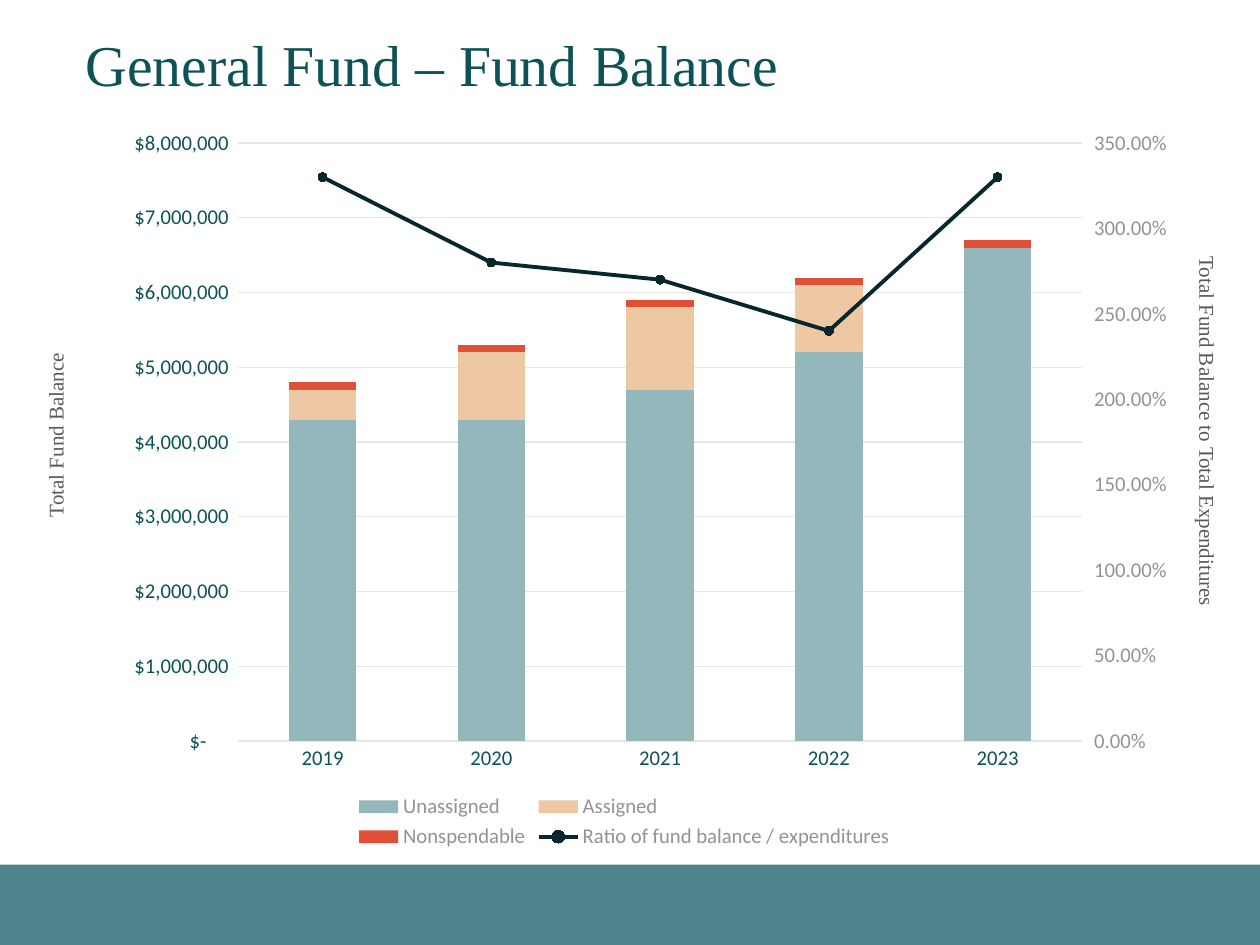
"""Build a slide that charts the general fund balance by year."""
from pptx import Presentation
from pptx.chart.data import CategoryChartData
from pptx.dml.color import RGBColor
from pptx.enum.chart import XL_CHART_TYPE, XL_LEGEND_POSITION, XL_MARKER_STYLE, XL_TICK_MARK
from pptx.enum.shapes import MSO_SHAPE
from pptx.enum.text import MSO_ANCHOR, MSO_AUTO_SIZE, PP_ALIGN
from pptx.oxml import parse_xml
from pptx.oxml.ns import nsdecls, qn
from pptx.util import Inches, Pt

STACKED = XL_CHART_TYPE.COLUMN_STACKED
BOTTOM = XL_LEGEND_POSITION.BOTTOM
CIRCLE = XL_MARKER_STYLE.CIRCLE
NO_TICK = XL_TICK_MARK.NONE
RECT = MSO_SHAPE.RECTANGLE
MIDDLE = MSO_ANCHOR.MIDDLE
FIXED, GROW = MSO_AUTO_SIZE.NONE, MSO_AUTO_SIZE.SHAPE_TO_FIT_TEXT
LEFT = PP_ALIGN.LEFT

TEAL = RGBColor(0x0D, 0x52, 0x57)
BAND = RGBColor(0x4F, 0x86, 0x8E)
SLATE = RGBColor(0x58, 0x59, 0x5B)
GRAY = RGBColor(0x92, 0x93, 0x95)
PALE = RGBColor(0xE6, 0xE6, 0xE7)
MIST = RGBColor(0x93, 0xB7, 0xBB)
SAND = RGBColor(0xED, 0xC8, 0xA3)
RED = RGBColor(0xE0, 0x4F, 0x38)
INK = RGBColor(0x07, 0x27, 0x2C)
SERIF, SANS = "Times New Roman", "Calibri"

WIDE, HIGH = Inches(10), Inches(7.5)
MONEY = '_("$"* #,##0_);_("$"* \\(#,##0\\);_("$"* "-"??_);_(@_)'
YEARS = ["2019", "2020", "2021", "2022", "2023"]
FUNDS = [
    ("Unassigned", [4300000, 4300000, 4700000, 5200000, 6600000], MIST),
    ("Assigned", [400000, 900000, 1100000, 900000, 0], SAND),
    ("Nonspendable", [100000] * 5, RED),
]
RATIO = ("Ratio of fund balance / expenditures", [3.3, 2.8, 2.7, 2.4, 3.3])


def set_font(font, face, size, color):
    font.name, font.size, font.color.rgb = face, Pt(size), color


def frame(x, y, w, h):
    return [int(WIDE * x), int(HIGH * y), int(WIDE * w), int(HIGH * h)]


deck = Presentation()
deck.slide_width, deck.slide_height = WIDE, HIGH
slide = deck.slides.add_slide(deck.slide_layouts[5])

band = slide.shapes.add_shape(RECT, *frame(0, 0.915, 1, 0.085))
band.shadow.inherit = False
band.fill.solid()
band.fill.fore_color.rgb = BAND
band.line.fill.background()

title = slide.shapes.title
title.left, title.top, title.width, title.height = frame(0.058, -0.019, 0.884, 0.181)
title.text_frame.text = "General Fund – Fund Balance"
title.text_frame.auto_size = FIXED
title.text_frame.vertical_anchor = MIDDLE
head = title.text_frame.paragraphs[0]
head.alignment, head.line_spacing = LEFT, 0.9
set_font(head.font, SERIF, 33, TEAL)

data = CategoryChartData()
data.categories = YEARS
for name, values, color in FUNDS:
    data.add_series(name, values, MONEY)
data.add_series(*RATIO, "0.00%")
chart = slide.shapes.add_chart(STACKED, *frame(0.078, 0.136, 0.848, 0.768), data).chart
set_font(chart.font, SANS, 10, SLATE)
chart.has_title = False
chart.has_legend = True
chart.legend.position = BOTTOM
chart.legend.include_in_layout = False
set_font(chart.legend.font, SANS, 12, GRAY)

bars = chart.plots[0]
bars.gap_width, bars.overlap, bars.vary_by_categories = 150, 100, False
for bar, (name, values, color) in zip(bars.series, FUNDS):
    bar.format.fill.solid()
    bar.format.fill.fore_color.rgb = color

years, money = chart.category_axis, chart.value_axis
for axis in (years, money):
    axis.major_tick_mark = axis.minor_tick_mark = NO_TICK
    set_font(axis.tick_labels.font, SANS, 12, TEAL)
money.minimum_scale, money.maximum_scale, money.major_unit = 0, 8000000, 1000000
money.tick_labels.number_format = MONEY
money.tick_labels.number_format_is_linked = False
money.format.line.fill.background()
for line in (years.format.line, money.major_gridlines.format.line):
    line.color.rgb, line.width = PALE, Pt(0.75)

area = chart._chartSpace.chart.plotArea
for old in area.findall(qn("c:layout")):
    area.remove(old)
spots = zip("xywh", (0.133, 0.02, 0.802, 0.824))
sides = "".join(f'<c:{key} val="{val}"/>' for key, val in spots)
area.insert(0, parse_xml(
    f'<c:layout {nsdecls("c")}><c:manualLayout><c:layoutTarget val="inner"/>'
    f'<c:xMode val="edge"/><c:yMode val="edge"/>{sides}</c:manualLayout></c:layout>'))

group = parse_xml(
    f'<c:lineChart {nsdecls("c")}><c:grouping val="standard"/><c:varyColors val="0"/>'
    '<c:marker val="1"/><c:axId val="5001"/><c:axId val="5002"/></c:lineChart>')
trend = area.findall(".//" + qn("c:ser"))[-1]
for flag in trend.findall(qn("c:invertIfNegative")):
    trend.remove(flag)
group.insert(2, trend)
area.find(qn("c:barChart")).addnext(group)

right = parse_xml(
    f'<c:valAx {nsdecls("c", "a")}><c:axId val="5002"/><c:scaling>'
    '<c:orientation val="minMax"/><c:max val="3.5"/><c:min val="0"/></c:scaling>'
    '<c:delete val="0"/><c:axPos val="r"/><c:numFmt formatCode="0.00%" sourceLinked="0"/>'
    '<c:majorTickMark val="out"/><c:minorTickMark val="none"/><c:tickLblPos val="nextTo"/>'
    '<c:spPr><a:ln><a:noFill/></a:ln></c:spPr><c:txPr><a:bodyPr/><a:p><a:pPr>'
    f'<a:defRPr sz="1200"><a:solidFill><a:srgbClr val="{GRAY}"/></a:solidFill>'
    f'<a:latin typeface="{SANS}"/></a:defRPr></a:pPr><a:endParaRPr lang="en-US"/></a:p></c:txPr>'
    '<c:crossAx val="5001"/><c:crosses val="max"/><c:crossBetween val="between"/>'
    '<c:majorUnit val="0.5"/></c:valAx>')
base = parse_xml(
    f'<c:catAx {nsdecls("c")}><c:axId val="5001"/><c:scaling><c:orientation val="minMax"/>'
    '</c:scaling><c:delete val="1"/><c:axPos val="b"/><c:majorTickMark val="none"/>'
    '<c:minorTickMark val="none"/><c:tickLblPos val="nextTo"/><c:crossAx val="5002"/>'
    '<c:crosses val="autoZero"/></c:catAx>')
area.find(qn("c:valAx")).addnext(right)
right.addnext(base)

ratio = chart.plots[1].series[0]
ratio.smooth = False
ratio.format.line.color.rgb, ratio.format.line.width = INK, Pt(2.25)
ratio.marker.style, ratio.marker.size = CIRCLE, 5
ratio.marker.format.fill.solid()
ratio.marker.format.fill.fore_color.rgb = INK
ratio.marker.format.line.color.rgb = INK

for words, x, w, turn in (
    ("Total Fund Balance", -0.032, 0.152, 270),
    ("Total Fund Balance to Total Expenditures", 0.808, 0.301, 90),
):
    label = slide.shapes.add_textbox(*frame(x, 0.439, w, 0.04))
    label.rotation = turn
    label.text_frame.text = words
    label.text_frame.word_wrap = False
    label.text_frame.auto_size = GROW
    set_font(label.text_frame.paragraphs[0].font, SERIF, 12, SLATE)

deck.save("out.pptx")
